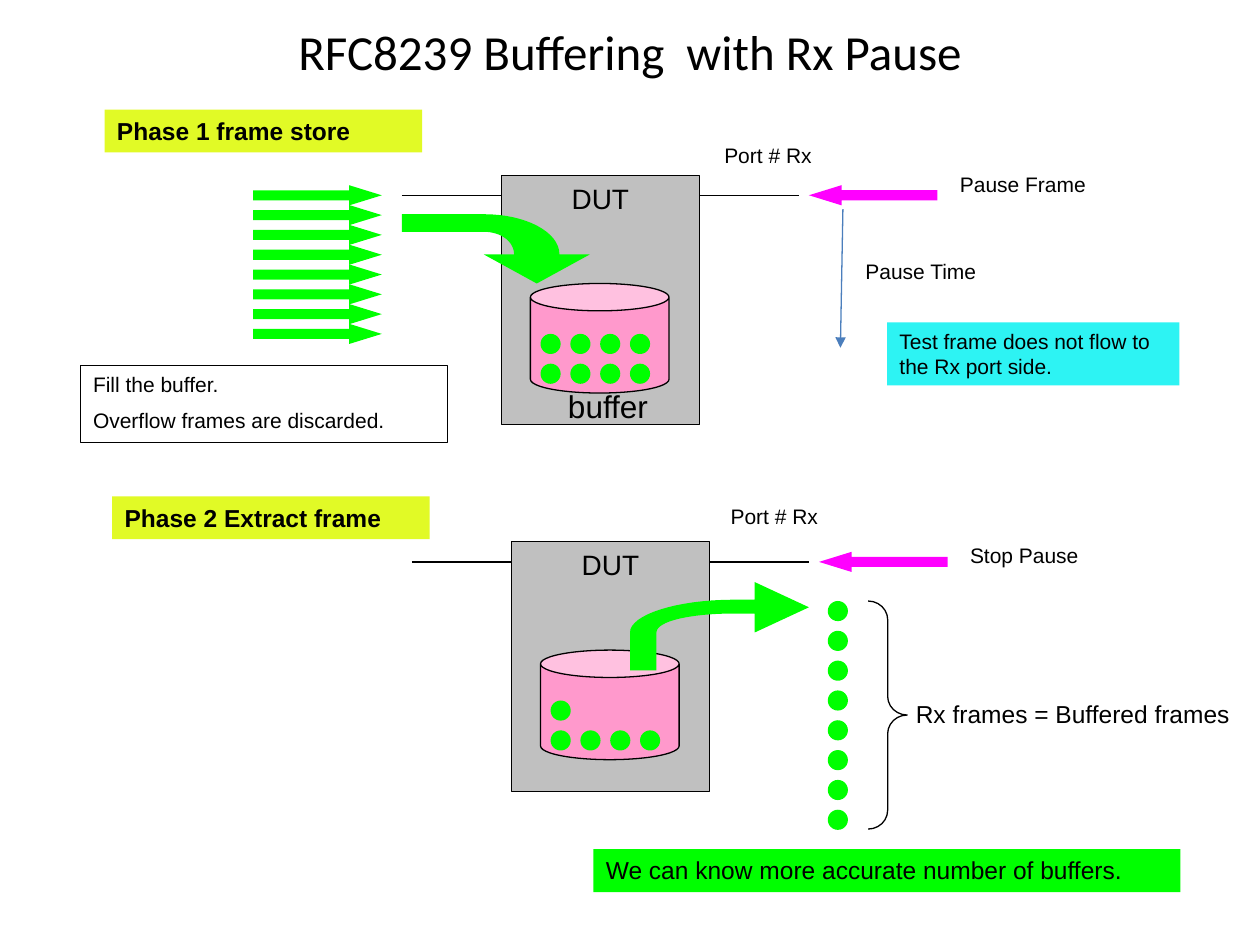
from lxml.etree import SubElement
from pptx import Presentation
from pptx.dml.color import RGBColor
from pptx.enum.shapes import MSO_CONNECTOR, MSO_SHAPE as Shape
from pptx.enum.text import MSO_ANCHOR as Anchor, MSO_AUTO_SIZE as AutoSize, PP_ALIGN as Align
from pptx.oxml.ns import qn
from pptx.util import Inches, Pt

COLORS = {
    "black": "000000",
    "device": "C0C0C0",
    "buffer": "FF99CC",
    "frame": "00FF00",
    "pause": "FF00FF",
    "phase": "E1FA26",
    "note": "2DF3F3",
    "time": "4B7EBC",
}
DOT = 0.16
DOT_GAP = 0.71 / 3
ARROW_GAP = 1.1 / 7
ARROW_SIZE = (1.02, 0.16)


def rgb(name):
    return RGBColor.from_string(COLORS[name])


def paint(shape, fill=None, line=None):
    shape.shadow.inherit = False
    if fill:
        shape.fill.solid()
        shape.fill.fore_color.rgb = rgb(fill)
    else:
        shape.fill.background()
    if line:
        shape.line.color.rgb = rgb(line)
        shape.line.width = Pt(0.75)
    else:
        shape.line.fill.background()


def add_shape(slide, kind, left, top, width, height, fill=None, line=None, adjust=()):
    shape = slide.shapes.add_shape(kind, Inches(left), Inches(top), Inches(width), Inches(height))
    for index, value in enumerate(adjust):
        shape.adjustments[index] = value
    paint(shape, fill, line)
    return shape


def write(shape, text, size=12, bold=False, font="Arial", align=Align.LEFT,
          anchor=Anchor.TOP, fit=AutoSize.SHAPE_TO_FIT_TEXT):
    frame = shape.text_frame
    frame.word_wrap = True
    frame.auto_size = fit
    frame.vertical_anchor = anchor
    for index, content in enumerate(text.split("\n")):
        paragraph = frame.add_paragraph() if index else frame.paragraphs[0]
        paragraph.alignment = align
        if index:
            paragraph.space_before = Pt(size / 2)
        run = paragraph.add_run()
        run.text = content
        run.font.name = font
        run.font.size = Pt(size)
        run.font.bold = bold
        run.font.color.rgb = rgb("black")


def add_label(slide, text, left, top, width, height=0.3, **style):
    label = slide.shapes.add_textbox(Inches(left), Inches(top), Inches(width), Inches(height))
    write(label, text, **style)


def add_note(slide, text, left, top, width, height, fill=None, line=None, **style):
    write(add_shape(slide, Shape.RECTANGLE, left, top, width, height, fill, line), text, **style)


def add_line(slide, x1, y1, x2, y2, color="black", arrow=False):
    line = slide.shapes.add_connector(
        MSO_CONNECTOR.STRAIGHT, Inches(x1), Inches(y1), Inches(x2), Inches(y2))
    line.line.color.rgb = rgb(color)
    line.line.width = Pt(0.75)
    if arrow:
        SubElement(line.line._get_or_add_ln(), qn("a:tailEnd"), type="triangle")
    SubElement(line._element.spPr, qn("a:effectLst"))


def add_arrow(slide, left, top, fill, rotation=0):
    arrow = add_shape(slide, Shape.LEFT_ARROW, left, top, *ARROW_SIZE, fill, adjust=(0.5, 1.62))
    arrow.rotation = rotation


def add_dot(slide, left, top):
    add_shape(slide, Shape.OVAL, left, top, DOT, DOT, "frame")


def curve(*controls, steps=16):
    weights = (1, 3, 3, 1)
    return [
        tuple(sum(w * (1 - t) ** (3 - i) * t ** i * point[axis]
                  for i, (w, point) in enumerate(zip(weights, controls)))
              for axis in (0, 1))
        for t in (step / steps for step in range(steps + 1))
    ]


def add_flow(slide, left, top, points):
    outline = [(Inches(left + x), Inches(top + y)) for x, y in points]
    builder = slide.shapes.build_freeform(*outline[0], scale=1.0)
    builder.add_line_segments(outline[1:], close=True)
    paint(builder.convert_to_shape(), "frame")


def add_device(slide, left, top, rows):
    device = add_shape(slide, Shape.RECTANGLE, left, top, 1.57, 1.98, "device", "black")
    write(device, "DUT", size=16, align=Align.CENTER, fit=AutoSize.NONE)
    for start in (left - 0.79, left + 1.57):
        add_line(slide, start, top + 0.16, start + 0.79, top + 0.16)
    add_arrow(slide, left + 2.44, top + 0.08, "pause")
    add_shape(slide, Shape.CAN, left + 0.23, top + 0.86, 1.1, 0.87, "buffer", "black", (0.25,))
    for row, count in enumerate(rows):
        for column in range(count):
            add_dot(slide, left + 0.31 + column * DOT_GAP, top + 1.26 + row * DOT_GAP)


def add_store_phase(slide, left, top):
    add_device(slide, left, top, (4, 4))
    add_flow(slide, left, top, [
        (0.28, 0.86), (0.7, 0.63),
        *curve((0.46, 0.63), (0.46, 0.45), (0.19, 0.31), (-0.14, 0.31)),
        (-0.79, 0.31), (-0.79, 0.45),
        *curve((-0.14, 0.45), (0, 0.45), (0.1, 0.53), (0.1, 0.63)),
        (-0.14, 0.63),
    ])
    for index in range(8):
        add_arrow(slide, left - 1.97, top + 0.08 + index * ARROW_GAP, "frame", rotation=180)
    add_note(slide, "Phase 1 frame store", left - 3.15, top - 0.52, 2.52, 0.34,
             "phase", size=14, bold=True)
    add_note(slide, "Fill the buffer.\nOverflow frames are discarded.",
             left - 3.34, top + 1.51, 2.91, 0.61, line="black")
    add_note(slide, "Test frame does not flow to the Rx port side.",
             left + 3.06, top + 1.17, 2.32, 0.5, "note")
    add_line(slide, left + 2.71, top + 0.27, left + 2.69, top + 1.37, "time", arrow=True)
    add_label(slide, "Pause Frame", left + 3.54, top - 0.08, 2.12)
    add_label(slide, "Pause Time", left + 2.79, top + 0.61, 2.12)
    add_label(slide, "Port # Rx", left + 1.67, top - 0.31, 1.34)
    add_label(slide, "buffer", left + 0.43, top + 1.63, 1.34, 0.4, size=18)


def add_extract_phase(slide, left, top):
    add_device(slide, left, top, (1, 4))
    add_flow(slide, left, top, [
        (2.36, 0.52), (1.93, 0.32), (1.93, 0.46),
        *curve((1.76, 0.46), (1.31, 0.46), (0.94, 0.58), (0.94, 0.72)),
        (0.94, 1.02), (1.15, 1.02),
        *curve((1.15, 0.72), (1.15, 0.63), (1.42, 0.57), (1.76, 0.57)),
        (1.93, 0.57), (1.93, 0.72),
    ])
    for index in range(8):
        add_dot(slide, left + 2.51, top + 0.47 + index * DOT_GAP)
    add_shape(slide, Shape.RIGHT_BRACE, left + 2.83, top + 0.47, 0.31, 1.81,
              line="black", adjust=(0.48, 0.5))
    add_note(slide, "Phase 2 Extract frame", left - 3.17, top - 0.36, 2.52, 0.34,
             "phase", size=14, bold=True)
    add_note(slide, "We can know more accurate number of buffers.",
             left + 0.65, top + 2.44, 4.66, 0.34, "frame", size=14)
    add_label(slide, "Stop Pause", left + 3.54, top - 0.04, 1.51)
    add_label(slide, "Rx frames = Buffered frames", left + 3.11, top + 1.2, 2.76, 0.34, size=14)
    add_label(slide, "Port # Rx", left + 1.64, top - 0.35, 1.34)


def main():
    deck = Presentation()
    deck.slide_width, deck.slide_height = Inches(10), Inches(7.5)
    slide = deck.slides.add_slide(deck.slide_layouts[6])
    add_store_phase(slide, 3.98, 1.39)
    add_extract_phase(slide, 4.06, 4.3)
    add_label(slide, "RFC8239 Buffering  with Rx Pause", 0.75, 0.13, 8.5, 0.55, size=28,
              font="Calibri", align=Align.CENTER, anchor=Anchor.MIDDLE, fit=AutoSize.NONE)
    deck.save("out.pptx")


if __name__ == "__main__":
    main()
